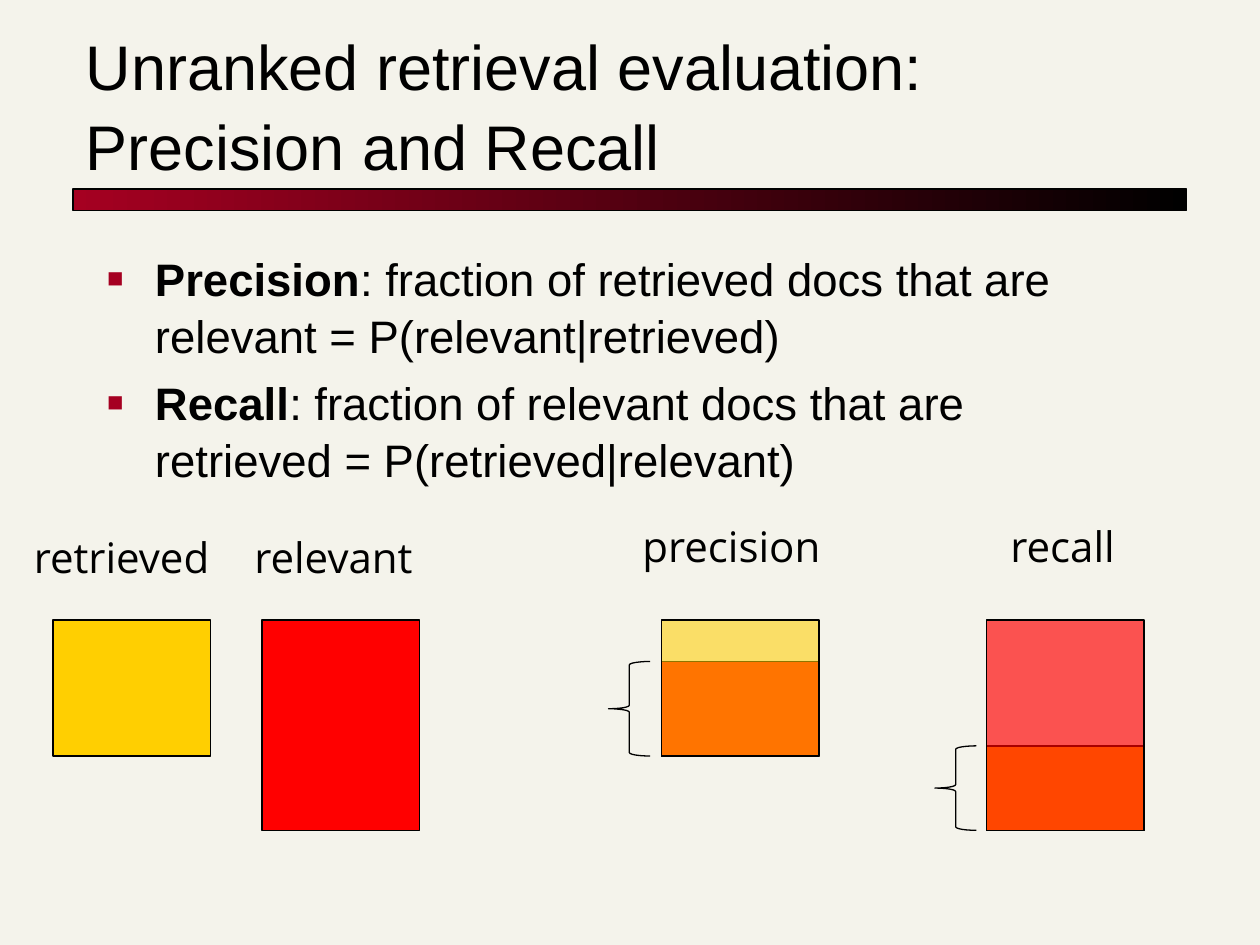
from dataclasses import dataclass
from typing import Optional

from lxml.etree import SubElement
from pptx import Presentation
from pptx.dml.color import RGBColor
from pptx.enum.shapes import MSO_SHAPE
from pptx.enum.text import MSO_ANCHOR, MSO_AUTO_SIZE, PP_ALIGN
from pptx.oxml.ns import qn
from pptx.util import Inches, Pt

BLACK, CRIMSON, YELLOW, RED = "000000", "A50021", "FFCF01", "FF0000"
BLOCK_WIDTH, BLOCK_TOP = 1.25, 4.92
RETRIEVED_HEIGHT, RELEVANT_HEIGHT = 1.08, 1.67


@dataclass
class Block:
    left: float
    top: float
    height: float
    color: str
    opacity: Optional[int] = None


@dataclass
class Label:
    text: str
    left: float
    top: float
    width: float


@dataclass
class Brace:
    left: float
    top: float
    height: float


# Overlapping blocks are listed from back to front
BLOCKS = [
    Block(0.42, BLOCK_TOP, RETRIEVED_HEIGHT, YELLOW),
    Block(2.08, BLOCK_TOP, RELEVANT_HEIGHT, RED),
    Block(5.25, 5.25, 0.75, RED),
    Block(5.25, BLOCK_TOP, RETRIEVED_HEIGHT, YELLOW, 56),
    Block(7.83, 5.92, 0.67, YELLOW),
    Block(7.83, BLOCK_TOP, RELEVANT_HEIGHT, RED, 66),
]
LABELS = [
    Label("retrieved", 0.17, 4.17, 1.65),
    Label("relevant", 1.92, 4.17, 1.51),
    Label("precision", 5, 4.08, 1.69),
    Label("recall", 7.92, 4.08, 1.08),
]
BRACES = [Brace(4.83, 5.25, 0.75), Brace(7.42, 5.92, 0.67)]
DEFINITIONS = [
    ("Precision", ": fraction of retrieved docs that are relevant = P(relevant|retrieved)"),
    ("Recall", ": fraction of relevant docs that are retrieved = P(retrieved|relevant)"),
]


def rgb(color: str) -> RGBColor:
    return RGBColor.from_string(color)


def place(shape, left: float, top: float, width: float, height: float) -> None:
    shape.left, shape.top = Inches(left), Inches(top)
    shape.width, shape.height = Inches(width), Inches(height)


def set_font(para, name: str, size: float) -> None:
    para.font.name = name
    para.font.size = Pt(size)
    para.font.color.rgb = rgb(BLACK)


def add_outlined(page, kind, left: float, top: float, width: float, height: float):
    shape = page.shapes.add_shape(
        kind, Inches(left), Inches(top), Inches(width), Inches(height))
    shape.shadow.inherit = False
    shape.line.color.rgb = rgb(BLACK)
    shape.line.width = Pt(0.75)
    return shape


def add_block(page, block: Block) -> None:
    shape = add_outlined(page, MSO_SHAPE.RECTANGLE, block.left, block.top,
                         BLOCK_WIDTH, block.height)
    shape.fill.solid()
    shape.fill.fore_color.rgb = rgb(block.color)
    if block.opacity is not None:
        color = shape.fill._xPr.find(qn("a:solidFill"))[0]
        SubElement(color, qn("a:alpha"), val=str(block.opacity * 1000))


def add_label(page, label: Label) -> None:
    box = page.shapes.add_textbox(Inches(label.left), Inches(label.top),
                                  Inches(label.width), Inches(0.5))
    box.text_frame.word_wrap = False
    box.text_frame.auto_size = MSO_AUTO_SIZE.SHAPE_TO_FIT_TEXT
    para = box.text_frame.paragraphs[0]
    para.text = label.text
    set_font(para, "Open Sans", 24)


def add_brace(page, brace: Brace) -> None:
    shape = add_outlined(page, MSO_SHAPE.LEFT_BRACE, brace.left, brace.top,
                         0.33, brace.height)
    shape.fill.background()


def set_bullet(para) -> None:
    properties = para._p.get_or_add_pPr()
    indent = Inches(0.38)
    properties.set("marL", str(indent))
    properties.set("indent", str(-indent))
    bullet_color = SubElement(properties, qn("a:buClr"))
    SubElement(bullet_color, qn("a:srgbClr"), val=CRIMSON)
    SubElement(properties, qn("a:buSzPct"), val="60000")
    SubElement(properties, qn("a:buFont"), typeface="Arial")
    SubElement(properties, qn("a:buChar"), char="■")


def fill_title(title) -> None:
    place(title, 0.58, 0.42, 8.83, 1.08)
    frame = title.text_frame
    frame.auto_size = MSO_AUTO_SIZE.NONE
    frame.vertical_anchor = MSO_ANCHOR.BOTTOM
    para = frame.paragraphs[0]
    para.text = "Unranked retrieval evaluation:\vPrecision and Recall"
    para.alignment = PP_ALIGN.LEFT
    para.line_spacing = 1.05
    set_font(para, "Arial", 36)


def fill_body(body) -> None:
    place(body, 0.75, 1.92, 8.5, 2)
    frame = body.text_frame
    frame.auto_size = MSO_AUTO_SIZE.NONE
    for index, (term, meaning) in enumerate(DEFINITIONS):
        para = frame.add_paragraph() if index else frame.paragraphs[0]
        para.line_spacing = 1.05
        para.space_before = Pt(5.2)
        set_bullet(para)
        set_font(para, "Arial", 26)
        span = para.add_run()
        span.text = term
        span.font.bold = True
        para.add_run().text = meaning


def main() -> None:
    deck = Presentation()
    deck.slide_width, deck.slide_height = Inches(10), Inches(7.5)
    page = deck.slides.add_slide(deck.slide_layouts[1])
    page.background.fill.solid()
    page.background.fill.fore_color.rgb = rgb("F4F3EB")

    # Title, gradient bar and definitions
    fill_title(page.shapes.title)
    fill_body(page.placeholders[1])
    bar = add_outlined(page, MSO_SHAPE.RECTANGLE, 0.58, 1.5, 8.84, 0.17)
    bar.fill.gradient()
    bar.fill.gradient_angle = 0
    for stop, color in zip(bar.fill.gradient_stops, (CRIMSON, BLACK)):
        stop.color.rgb = rgb(color)

    # Diagram of the document sets
    for block in BLOCKS:
        add_block(page, block)
    for label in LABELS:
        add_label(page, label)
    for brace in BRACES:
        add_brace(page, brace)

    deck.save("out.pptx")


if __name__ == "__main__":
    main()
